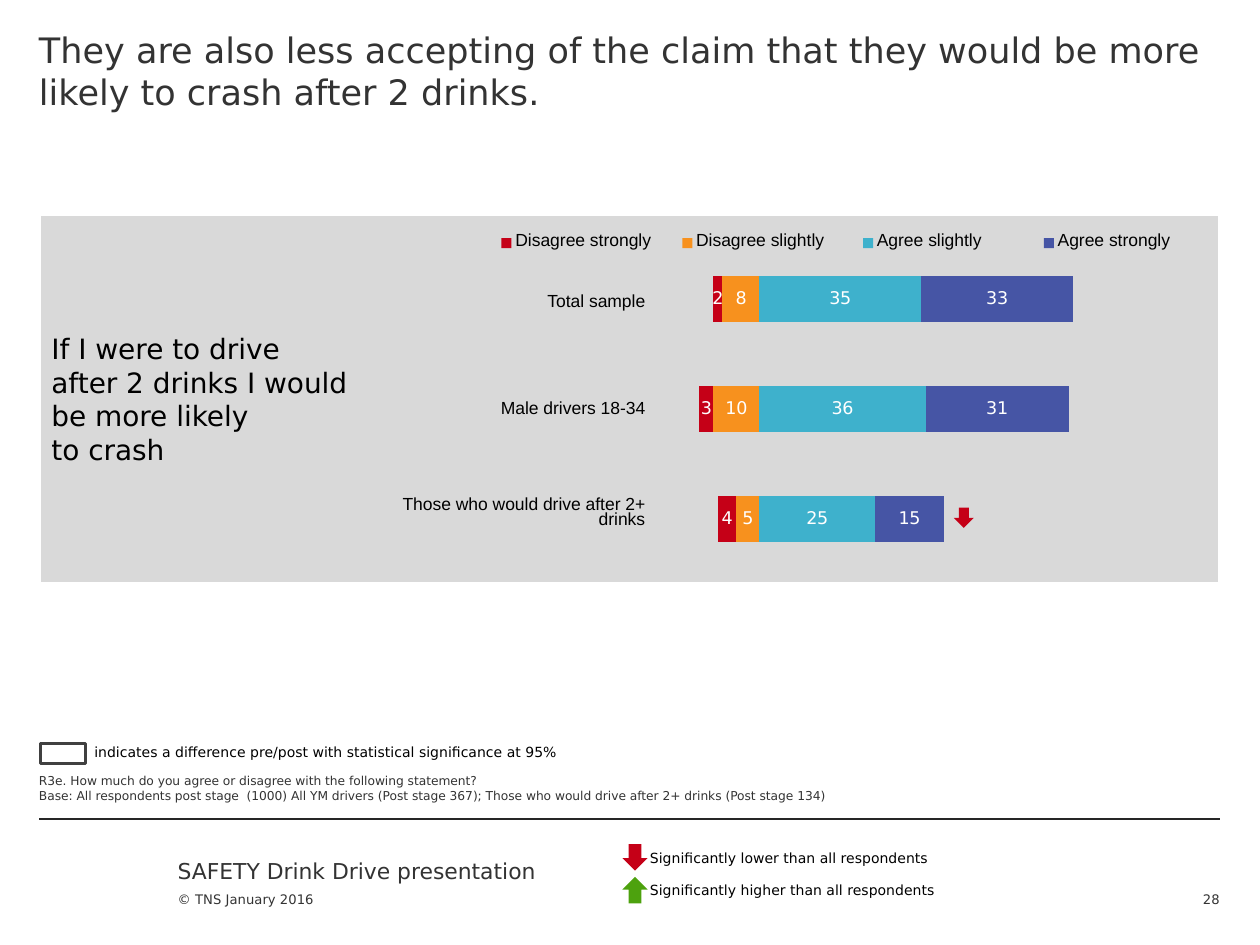
import pptx
import pptx.chart.data
import pptx.dml.color
import pptx.enum.chart
import pptx.enum.shapes
import pptx.enum.text
import pptx.oxml
import pptx.oxml.ns
import pptx.util
from lxml import etree

WIDTH, HEIGHT = pptx.util.Inches(10), pptx.util.Inches(7.5)
COLS, ROWS = 100, 75
SANS, ARIAL = "DejaVu Sans", "Arial"
COLORS = {
    "ink": "333333", "black": "000000", "white": "FFFFFF", "rule": "262626",
    "panel": "D9D9D9", "frame": "404040", "red": "C50017", "green": "4DA20E",
    "orange": "F7911E", "cyan": "3EB1CC", "indigo": "4655A5",
}
LEGEND = [("Disagree strongly", "red"), ("Disagree slightly", "orange"),
          ("Agree slightly", "cyan"), ("Agree strongly", "indigo")]
GROUPS = ["Total sample", "Male drivers 18-34", "Those who would drive after 2+ drinks"]
SIGNED = "#,##0;[White]#,##0"
SERIES = [("Series 1", "orange", [-8, -10, -5], SIGNED),
          ("Series 2", "red", [-2, -3, -4], SIGNED),
          ("Series 3", "cyan", [35, 36, 25], "#,##0"),
          ("Series 4", "indigo", [33, 31, 15], "General")]
NO_STYLE = "{2D5ABB26-0587-4C30-8999-92F81FD0307C}"
SHAPE = pptx.enum.shapes.MSO_SHAPE
ALIGN = pptx.enum.text.PP_ALIGN
ANCHOR = pptx.enum.text.MSO_ANCHOR


def rgb(name):
    return pptx.dml.color.RGBColor.from_string(COLORS[name])


def emu(box):
    """Turn grid columns and rows (left, top, width, height) into lengths."""
    return [round(n * size / count) for n, size, count
            in zip(box, (WIDTH, HEIGHT) * 2, (COLS, ROWS) * 2)]


def style(font, size, color, name=SANS):
    font.size, font.name, font.bold = pptx.util.Pt(size), name, False
    font.color.rgb = rgb(color)


def write(tf, lines, size, color, name=SANS, align=ALIGN.LEFT, spacing=None):
    for i, line in enumerate(lines):
        p = tf.add_paragraph() if i else tf.paragraphs[0]
        p.alignment = align
        if spacing:
            p.line_spacing = spacing
        r = p.add_run()
        r.text = line
        style(r.font, size, color, name)


def add_text(s, box, lines, size, color="ink", anchor=ANCHOR.TOP,
             align=ALIGN.LEFT, inset=False):
    tf = s.shapes.add_textbox(*emu(box)).text_frame
    tf.word_wrap, tf.vertical_anchor = True, anchor
    if not inset:
        tf.margin_left = tf.margin_right = tf.margin_top = tf.margin_bottom = 0
    write(tf, lines, size, color, align=align)


def add_block(s, kind, box, fill=None, line=None, width=2):
    sp = s.shapes.add_shape(kind, *emu(box))
    sp.shadow.inherit = False
    if fill:
        sp.fill.solid()
        sp.fill.fore_color.rgb = rgb(fill)
    else:
        sp.fill.background()
    if line:
        sp.line.color.rgb = rgb(line)
        sp.line.width = pptx.util.Pt(width)
    else:
        sp.line.fill.background()
    return sp


def add_plain_table(s, box, widths, heights):
    """Add a table without style, lines or fills."""
    table = s.shapes.add_table(len(heights), len(widths), *emu(box)).table
    table.first_row = table.horz_banding = False
    table._tbl.find(".//" + pptx.oxml.ns.qn("a:tableStyleId")).text = NO_STYLE
    for column, width in zip(table.columns, widths):
        column.width = emu((width, 0, 0, 0))[0]
    for row, height in zip(table.rows, heights):
        row.height = emu((0, height, 0, 0))[1]
    for cell in table.iter_cells():
        cell.fill.background()
    return table


def heading(s, box):
    x, y, w, h = box
    add_text(s, (x, y + 2.3, w, h - 2.3),
             ["They are also less accepting of the claim that they would be "
              "more likely to crash after 2 drinks."], 20)


def statement(s, box):
    sp = add_block(s, SHAPE.RECTANGLE, box, "panel", "white")
    tf = sp.text_frame
    tf.vertical_anchor = ANCHOR.MIDDLE
    write(tf, ["If I were to drive", "after 2 drinks I would",
               "be more likely", "to crash"], 16, "black")


def set_plot_area(chart, x, y, w, h):
    """Fix the inner plot area, in shares of the chart."""
    plot_area = chart._chartSpace.chart.plotArea
    for old in plot_area.findall(pptx.oxml.ns.qn("c:layout")):
        plot_area.remove(old)
    layout = etree.Element(pptx.oxml.ns.qn("c:layout"))
    manual = etree.SubElement(layout, pptx.oxml.ns.qn("c:manualLayout"))
    for tag, value in [("layoutTarget", "inner"), ("xMode", "edge"), ("yMode", "edge"),
                       ("x", x), ("y", y), ("w", w), ("h", h)]:
        etree.SubElement(manual, pptx.oxml.ns.qn("c:" + tag), val=str(value))
    plot_area.insert(0, layout)


def opinion_chart(s, box):
    data = pptx.chart.data.CategoryChartData()
    data.categories = ["1", "2", "3", "4", "5"]
    for name, _, (total, male, drinkers), _ in SERIES:
        data.add_series(name, [total, None, male, None, drinkers])
    chart = s.shapes.add_chart(pptx.enum.chart.XL_CHART_TYPE.BAR_STACKED,
                               *emu(box), data).chart
    chart.has_legend = chart.has_title = False
    style(chart.font, 18, "black", ARIAL)
    chart.category_axis.reverse_order = True
    value_axis = chart.value_axis
    value_axis.minimum_scale, value_axis.maximum_scale = -70, 90
    value_axis.has_major_gridlines = False
    chart.category_axis.visible = value_axis.visible = False
    plot = chart.plots[0]
    plot.gap_width, plot.overlap, plot.vary_by_categories = 19, 100, False
    for series, (_, color, _, number_format) in zip(plot.series, SERIES):
        series.invert_if_negative = False
        series.format.fill.solid()
        series.format.fill.fore_color.rgb = rgb(color)
        labels = series.data_labels
        labels.show_value = True
        labels.number_format, labels.number_format_is_linked = number_format, False
        labels.position = pptx.enum.chart.XL_LABEL_POSITION.CENTER
        style(labels.font, 10, "white")
    set_plot_area(chart, 0.03, 0.2, 0.91, 0.76)


def legend(s, box):
    x, y, w, h = box
    step = w / len(LEGEND)
    table = add_plain_table(s, box, [step] * len(LEGEND), [h])
    for i, (label, color) in enumerate(LEGEND):
        write(table.cell(0, i).text_frame, [label], 10, "black", ARIAL)
        add_block(s, SHAPE.RECTANGLE, (x - 0.1 + i * step, y + 1.1, 0.8, 0.8), color)


def group_labels(s, box):
    heights = [6.3, 2.6, 5.5, 2.7, 5.5, 2.7]
    table = add_plain_table(s, box, [box[2]], heights)
    for i in range(len(heights)):
        cell = table.cell(i, 0)
        cell.vertical_anchor = ANCHOR.MIDDLE
        if i % 2:
            p = cell.text_frame.paragraphs[0]
            etree.SubElement(p._p, pptx.oxml.ns.qn("a:endParaRPr"), sz="800")
        else:
            write(cell.text_frame, [GROUPS[i // 2]], 10, "black", ARIAL,
                  ALIGN.RIGHT, 0.8)


def notes(s, box):
    x, y, w, h = box
    add_text(s, box, [
        "R3e. How much do you agree or disagree with the following statement?",
        "Base: All respondents post stage  (1000) All YM drivers (Post stage 367); "
        "Those who would drive after 2+ drinks (Post stage 134)"],
        7, anchor=ANCHOR.BOTTOM)
    add_block(s, SHAPE.RECTANGLE, (x + 0.1, y + 1.3, 3.6, 1.6), line="frame")
    add_text(s, (x + 3.4, y + 0.8, 39.9, 2.4),
             ["indicates a difference pre/post with statistical significance at 95%"],
             8, "black", inset=True)


def arrow_key(s, box):
    x, y, w, h = box
    entries = [(SHAPE.DOWN_ARROW, "red", "lower"), (SHAPE.UP_ARROW, "green", "higher")]
    for i, (kind, color, word) in enumerate(entries):
        top = y + i * h / len(entries)
        add_block(s, kind, (x, top + 0.1, 2, 2.1), color)
        add_text(s, (x + 1.2, top, w - 1.2, 2.4),
                 [f"Significantly {word} than all respondents"], 8, "black", inset=True)


def footer(s, box):
    x, y, w, h = box
    left, top, right, _ = emu((x, y, x + w, 0))
    rule = s.shapes.add_connector(pptx.enum.shapes.MSO_CONNECTOR.STRAIGHT,
                                  left, top, right, top)
    rule.line.color.rgb = rgb("rule")
    rule.line.width = pptx.util.Pt(0.75)
    etree.SubElement(rule._element.spPr, pptx.oxml.ns.qn("a:effectLst"))
    add_text(s, (x + 11, y + 3.1, 33.1, 2.1), ["SAFETY Drink Drive presentation"], 12.5)
    add_text(s, (x + 11, y + 4.2, 27.8, 2.8), ["© TNS January 2016"], 7.5,
             anchor=ANCHOR.BOTTOM)
    arrow_key(s, (x + 46.3, y + 1.9, 27.1, 5.2))
    add_text(s, (x + w - 5.5, y + 4.2, 5.5, 2.8), ["28"], 7.5,
             anchor=ANCHOR.BOTTOM, align=ALIGN.RIGHT)


def main():
    prs = pptx.Presentation()
    prs.slide_width, prs.slide_height = WIDTH, HEIGHT
    s = prs.slides.add_slide(prs.slide_layouts[6])
    margin, width = 3.1, 93.7
    heading(s, (margin, 0, width, 11.3))
    statement(s, (margin, 17, width, 29.3))
    opinion_chart(s, (32.7, 15.8, 64.4, 28.7))
    legend(s, (39.9, 17.8, 57.4, 2.7))
    group_labels(s, (29.9, 20.9, 22.3, 25.3))
    add_block(s, SHAPE.DOWN_ARROW, (75.7, 40.3, 1.6, 1.6), "red")
    notes(s, (margin, 57.7, width, 6))
    footer(s, (margin, 65, width, 10))
    prs.save("out.pptx")


if __name__ == "__main__":
    main()
